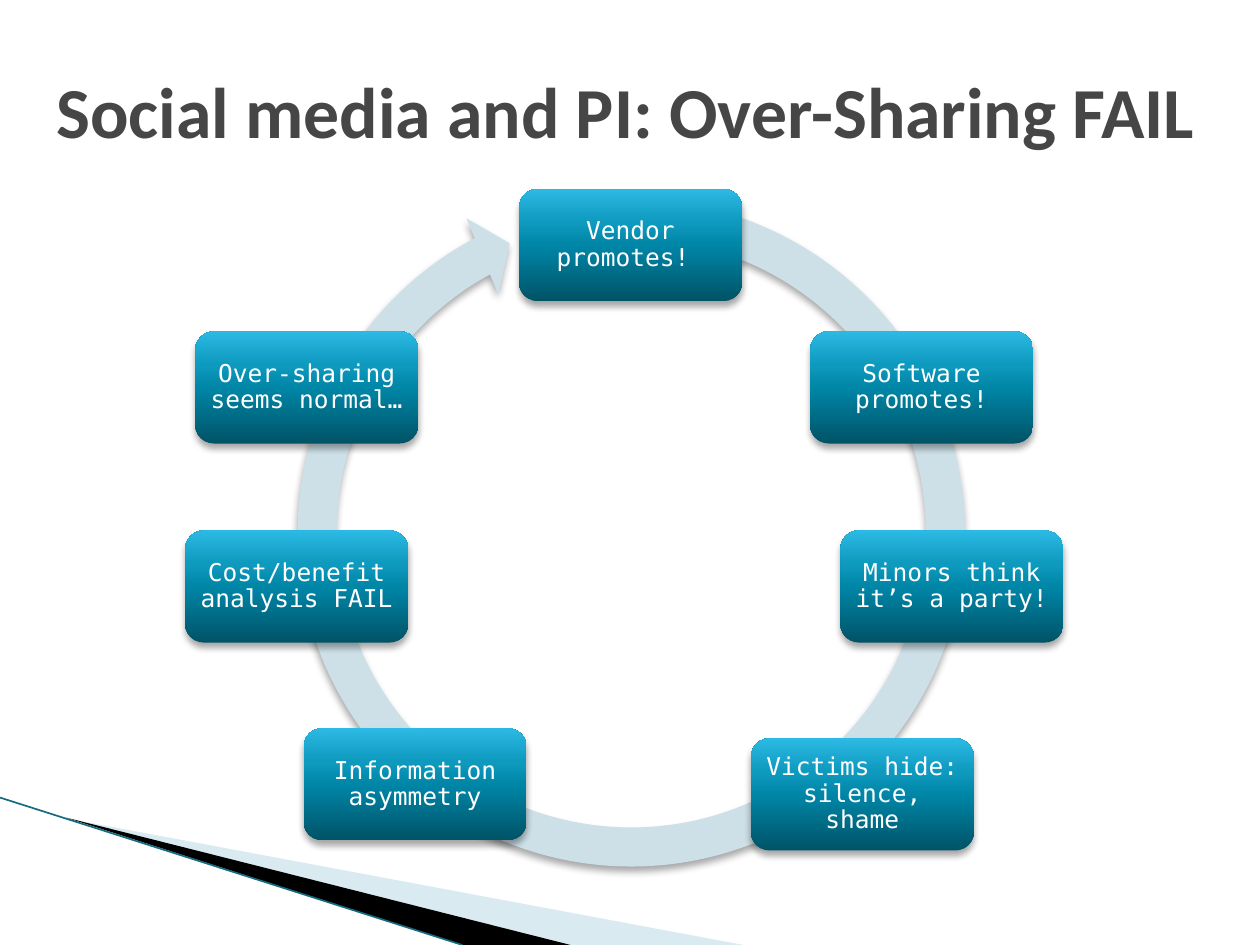
from lxml import etree
from pptx import Presentation
from pptx.dml.color import RGBColor
from pptx.enum.shapes import MSO_CONNECTOR, MSO_SHAPE
from pptx.enum.text import MSO_ANCHOR, PP_ALIGN
from pptx.oxml import parse_xml
from pptx.oxml.ns import nsdecls, qn
from pptx.util import Inches, Pt

MIDDLE = MSO_ANCHOR.MIDDLE
CENTER = PP_ALIGN.CENTER
STRAIGHT = MSO_CONNECTOR.STRAIGHT
ROUNDED = MSO_SHAPE.ROUNDED_RECTANGLE
CIRCULAR_ARROW = MSO_SHAPE.CIRCULAR_ARROW

COLORS = {
    "title": "464646", "label": "FFFFFF", "cycle": "CDE0E8", "shadow": "000000",
    "pale wedge": "A0CBDC", "dark wedge": "000000", "edge": "156B80",
}
GRADIENT = [(0, "005367"), (50, "0086A7"), (70, "0E9ABE"), (100, "2CB9E3")]

TITLE = "Social media and PI: Over-Sharing FAIL"
STEPS = [
    ("Vendor promotes! ", 4.12, 1.5),
    ("Software promotes!", 6.43, 2.63),
    ("Minors think it’s a party!", 6.67, 4.21),
    ("Victims hide: silence, shame", 5.96, 5.86),
    ("Information asymmetry", 2.41, 5.78),
    ("Cost/benefit analysis FAIL", 1.47, 4.21),
    ("Over-sharing seems normal…", 1.55, 2.63),
]
STEP_SIZE = (1.77, 0.89)
CYCLE_FRAME = (2.19, 1.41, 5.64, 5.64)
CYCLE_ADJUSTMENTS = (0.055, 3.307, 145.031, 169.575, 0.058)
WEDGES = [
    ("pale wedge", 40, [(0.55, 6.5), (5.9, 7.5), (4.52, 7.5)]),
    ("dark wedge", 100, [(0.53, 6.49), (4.53, 7.5), (3.67, 7.5)]),
]
EDGE = (0, 6.33, 3.67, 7.5)


def color(name):
    return RGBColor.from_string(COLORS[name])


def inches(values):
    return [Inches(value) for value in values]


def paint(shape, name):
    shape.shadow.inherit = False
    shape.fill.solid()
    shape.fill.fore_color.rgb = color(name)
    shape.line.fill.background()


def cast_shadow(shape):
    shape.shadow.inherit = False
    effects = shape.element.spPr.find(qn("a:effectLst"))
    effects.append(parse_xml(
        f'<a:outerShdw {nsdecls("a")} blurRad="{Pt(4)}" dist="{Pt(3)}" dir="5400000" '
        f'rotWithShape="0"><a:srgbClr val="{COLORS["shadow"]}">'
        '<a:alpha val="35000"/></a:srgbClr></a:outerShdw>'))


def fill_gradient(shape):
    stops = "".join(
        f'<a:gs pos="{position * 1000}"><a:srgbClr val="{value}"/></a:gs>'
        for position, value in GRADIENT)
    shape.element.spPr.find(qn("a:prstGeom")).addnext(parse_xml(
        f'<a:gradFill {nsdecls("a")} rotWithShape="1"><a:gsLst>{stops}</a:gsLst>'
        '<a:lin ang="16200000" scaled="0"/></a:gradFill>'))


def write(shape, text, font, size, name, bold=False):
    frame = shape.text_frame
    frame.text = text
    frame.word_wrap = True
    frame.vertical_anchor = MIDDLE
    para = frame.paragraphs[0]
    span = para.runs[0].font
    span.name, span.size, span.bold = font, Pt(size), bold
    span.color.rgb = color(name)
    return para


def add_wedge(page, name, opacity, points):
    start, *rest = [inches(point) for point in points]
    builder = page.shapes.build_freeform(*start, scale=1.0)
    builder.add_line_segments(rest, close=True)
    wedge = builder.convert_to_shape()
    paint(wedge, name)
    if opacity < 100:
        tint = wedge.element.spPr.find(qn("a:solidFill"))[0]
        etree.SubElement(tint, qn("a:alpha")).set("val", str(opacity * 1000))


def add_step(page, text, left, top):
    box = page.shapes.add_shape(ROUNDED, *inches((left, top, *STEP_SIZE)))
    box.adjustments[0] = 0.1667
    fill_gradient(box)
    box.line.fill.background()
    cast_shadow(box)
    frame = box.text_frame
    frame.margin_left = frame.margin_right = Inches(0.06)
    frame.margin_top = frame.margin_bottom = Inches(0.06)
    para = write(box, text, "DejaVu Sans Mono", 14, "label")
    para.alignment = CENTER
    para.line_spacing = 0.9


def main():
    deck = Presentation()
    deck.slide_width, deck.slide_height = Inches(10), Inches(7.5)
    page = deck.slides.add_slide(deck.slide_layouts[6])

    for name, opacity, points in WEDGES:
        add_wedge(page, name, opacity, points)
    edge = page.shapes.add_connector(STRAIGHT, *inches(EDGE))
    edge.line.color.rgb = color("edge")
    edge.line.width = Pt(0.95)
    etree.SubElement(edge.element.spPr, qn("a:effectLst"))

    title = page.shapes.add_textbox(*inches((0.35, 0.25, 9.3, 1.25)))
    write(title, TITLE, "Calibri", 41, "title", bold=True)

    cycle = page.shapes.add_shape(CIRCULAR_ARROW, *inches(CYCLE_FRAME))
    for index, value in enumerate(CYCLE_ADJUSTMENTS):
        cycle.adjustments[index] = value
    paint(cycle, "cycle")
    cast_shadow(cycle)

    for step in STEPS:
        add_step(page, *step)
    deck.save("out.pptx")


if __name__ == "__main__":
    main()
